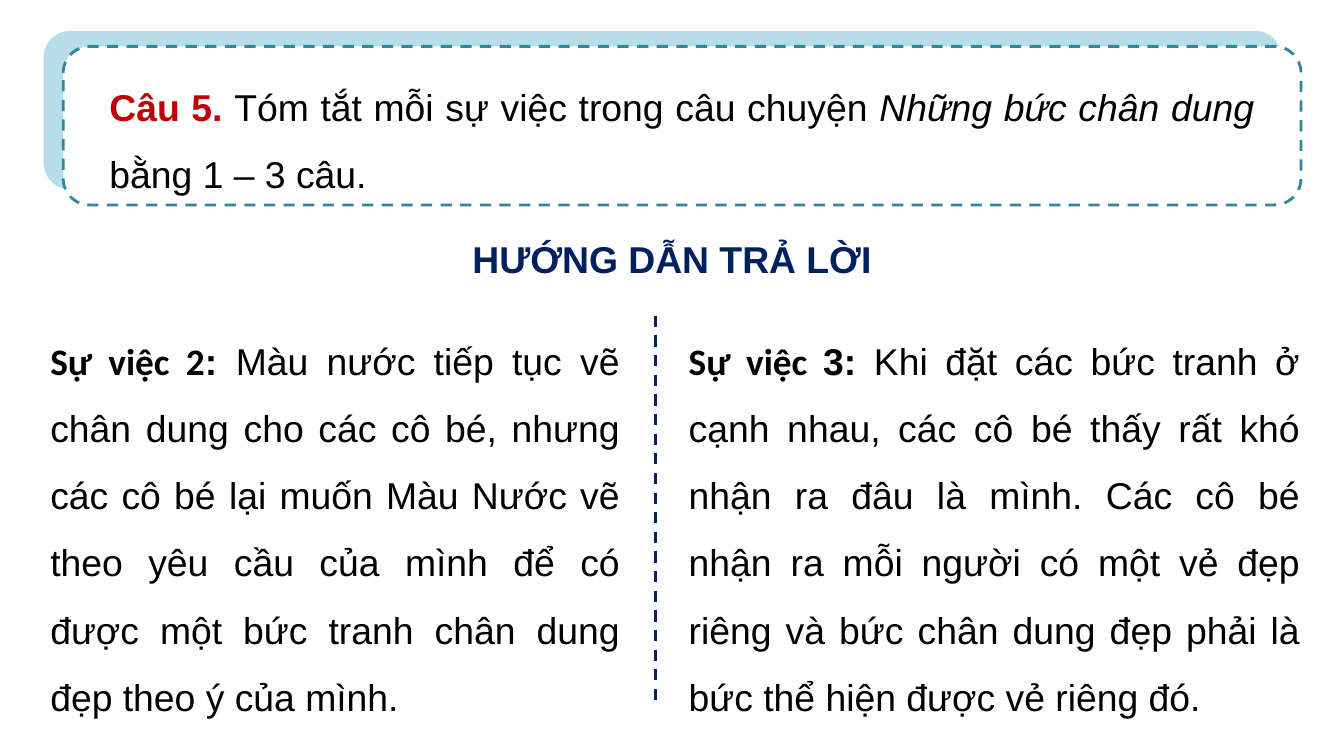
from lxml import etree
from pptx import Presentation
from pptx.dml.color import RGBColor
from pptx.enum.dml import MSO_LINE
from pptx.enum.shapes import MSO_CONNECTOR, MSO_SHAPE
from pptx.enum.text import MSO_ANCHOR, MSO_AUTO_SIZE, PP_ALIGN
from pptx.oxml.ns import qn
from pptx.util import Inches, Pt

ROUNDED = MSO_SHAPE.ROUNDED_RECTANGLE
STRAIGHT = MSO_CONNECTOR.STRAIGHT
DASH = MSO_LINE.DASH
TOP = MSO_ANCHOR.TOP
GROW = MSO_AUTO_SIZE.SHAPE_TO_FIT_TEXT
JUSTIFY, CENTER = PP_ALIGN.JUSTIFY, PP_ALIGN.CENTER

SKY, TEAL, WHITE = "B7DEE8", "31859C", "FFFFFF"
RED, NAVY, BLACK = "C00000", "002060", "000000"
PLAIN = {"name": "Arial", "size": Pt(40), "bold": False, "italic": False}
BOLD = {**PLAIN, "bold": True}
ITALIC = {**PLAIN, "italic": True}
LABEL = {**BOLD, "name": "Calibri"}


def rgb(color):
    return RGBColor.from_string(color)


def dash_line(line, color):
    line.color.rgb = rgb(color)
    line.width = Pt(3)
    line.dash_style = DASH


def add_text(slide, box, runs, align=JUSTIFY, spacing=1.5):
    """Write one paragraph; each run is (text, font format, colour)."""
    frame = slide.shapes.add_textbox(*map(Inches, box)).text_frame
    frame.word_wrap = True
    frame.auto_size = GROW
    frame.vertical_anchor = TOP
    paragraph = frame.paragraphs[0]
    paragraph.alignment = align
    paragraph.line_spacing = spacing
    for text, font_format, color in runs:
        run = paragraph.add_run()
        run.text = text
        for key, value in font_format.items():
            setattr(run.font, key, value)
        run.font.color.rgb = rgb(color)


def add_card(slide, box, fill, outline=None):
    card = slide.shapes.add_shape(ROUNDED, *map(Inches, box))
    card.shadow.inherit = False
    card.fill.solid()
    card.fill.fore_color.rgb = rgb(fill)
    if outline:
        dash_line(card.line, outline)
    else:
        card.line.fill.background()


def add_question(slide, box, runs):
    """Dashed card over an offset backing card, with the question inside."""
    left, top, width, height = box
    add_card(slide, (left - 0.29, top - 0.23, width, height), SKY)
    add_card(slide, box, WHITE, TEAL)
    add_text(slide, (left + 0.59, top + 0.18, width - 1.19, 2), runs)


def add_heading(slide, box, text):
    add_text(slide, box, [(text, BOLD, NAVY)], CENTER, 1.0)


def add_divider(slide, x, top, bottom):
    divider = slide.shapes.add_connector(
        STRAIGHT, *map(Inches, (x, top, x, bottom)))
    dash_line(divider.line, NAVY)
    etree.SubElement(divider._element.spPr, qn("a:effectLst"))


def add_event(slide, box, label, number_end, summary):
    add_text(slide, box, [(label, LABEL, BLACK), (number_end, BOLD, BLACK),
                          (summary, PLAIN, BLACK)])


def main():
    deck = Presentation()
    deck.slide_width, deck.slide_height = Inches(20), Inches(11.25)
    slide = deck.slides.add_slide(deck.slide_layouts[6])

    # Question
    add_question(slide, (0.94, 0.69, 18.42, 2.36), [
        ("Câu 5. ", BOLD, RED),
        ("Tóm tắt mỗi sự việc trong câu chuyện ", PLAIN, BLACK),
        ("Những bức chân dung ", ITALIC, BLACK),
        ("bằng 1 – 3 câu.", PLAIN, BLACK),
    ])

    # Answer guide: two events either side of a divider
    add_heading(slide, (0.79, 3.46, 18.42, 0.77), "HƯỚNG DẪN TRẢ LỜI")
    add_divider(slide, 9.75, 4.7, 10.45)
    add_event(slide, (0.65, 4.65, 8.67, 6.03), "Sự việc 2", ": ",
              "Màu nước tiếp tục vẽ chân dung cho các cô bé, nhưng các cô bé "
              "lại muốn Màu Nước vẽ theo yêu cầu của mình để có được một bức "
              "tranh chân dung đẹp theo ý của mình.")
    add_event(slide, (10.15, 4.65, 9.29, 6.03), "Sự việc ", "3: ",
              "Khi đặt các bức tranh ở cạnh nhau, các cô bé thấy rất khó nhận "
              "ra đâu là mình. Các cô bé nhận ra mỗi người có một vẻ đẹp riêng "
              "và bức chân dung đẹp phải là bức thể hiện được vẻ riêng đó.")

    deck.save("out.pptx")


if __name__ == "__main__":
    main()
